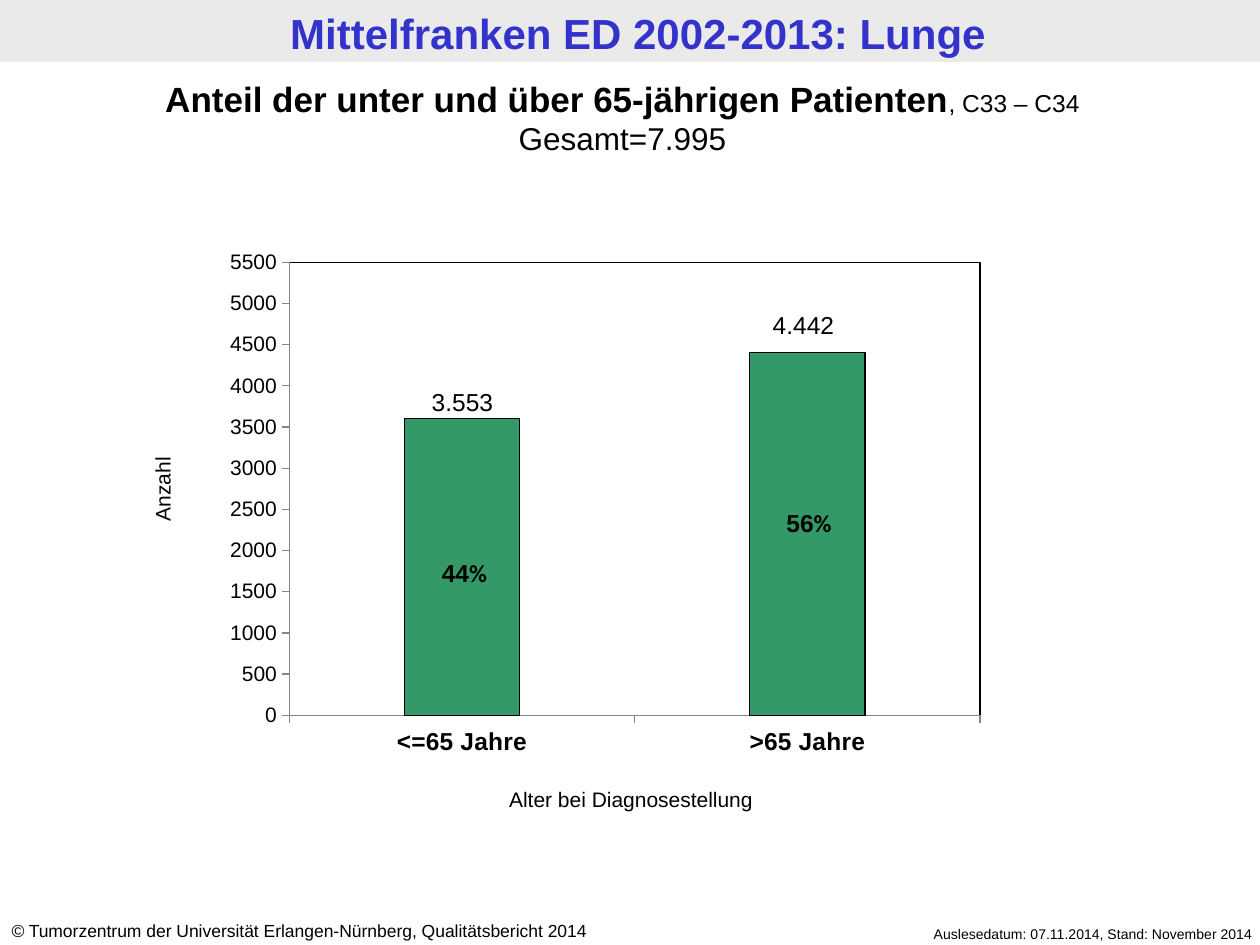
from lxml import etree
from pptx import Presentation
from pptx.chart.data import CategoryChartData
from pptx.dml.color import RGBColor
from pptx.enum.chart import XL_CHART_TYPE, XL_TICK_MARK
from pptx.enum.shapes import MSO_SHAPE
from pptx.enum.text import MSO_AUTO_SIZE, PP_ALIGN
from pptx.oxml import parse_xml
from pptx.oxml.ns import nsdecls, qn
from pptx.util import Emu, Pt

PX = 914400 / 126
BLACK, GREY, BAND, BLUE, GREEN = "000000", "868686", "EAEAEA", "3333CC", "339966"
LEFT, CENTER, RIGHT = PP_ALIGN.LEFT, PP_ALIGN.CENTER, PP_ALIGN.RIGHT

# Content: a span is (text, size, style), style letters: b bold, i italic, c Calibri
TITLE = [[("Mittelfranken ED 2002-2013: Lunge", 24, "b")]]
SUBTITLE = [
    [("Anteil der unter und über 65-jährigen Patienten", 20, "b"), (", C33 – C34", 14, "")],
    [("Gesamt=7.995", 18, "")],
]
SOURCE = [[("©", 10, "i"),
           (" Tumorzentrum der Universität Erlangen-Nürnberg, Qualitätsbericht 2014", 10, "")]]
DATES = [[("Auslesedatum: 07.11.2014, Stand: November 2014", 8, "")]]
AGE_GROUPS = {"<=65 Jahre": 3600, ">65 Jahre": 4400}
CHART_AREA = (190, 179, 879, 587)
PLOT_LAYOUT = {"x": 0.113, "y": 0.142, "w": 0.786, "h": 0.772}

# Labels around the bars: (text, bold with Calibri percent sign, area, rotation)
LABELS = [
    ("44", True, (402, 552, 125, 43), 0),
    ("56", True, (749, 502, 120, 43), 0),
    ("3.553", False, (398, 381, 129, 43), 0),
    ("4.442", False, (739, 304, 129, 43), 0),
]
AXIS_TITLES = [
    ("Alter bei Diagnosestellung", (421, 780, 420, 38), 0),
    ("Anzahl", (-2, 470, 329, 38), 270),
]


def px(*values):
    return [Emu(round(value * PX)) for value in values]


def color(code):
    return RGBColor.from_string(code)


def set_font(font, size, code=BLACK, bold=False, name="Arial"):
    font.name, font.size, font.bold = name, Pt(size), bold
    font.color.rgb = color(code)


def add_text(page, area, paragraphs, align=CENTER, code=BLACK, rotation=0, insets=None):
    box = page.shapes.add_textbox(*px(*area))
    box.rotation = rotation
    frame = box.text_frame
    frame.word_wrap = True
    frame.auto_size = MSO_AUTO_SIZE.SHAPE_TO_FIT_TEXT
    if insets:
        frame.margin_left, frame.margin_top, frame.margin_right, frame.margin_bottom = px(*insets)
    for index, spans in enumerate(paragraphs):
        paragraph = frame.add_paragraph() if index else frame.paragraphs[0]
        paragraph.alignment = align
        for text, size, style in spans:
            span = paragraph.add_run()
            span.text = text
            set_font(span.font, size, code, "b" in style, "Calibri" if "c" in style else "Arial")
            span.font.italic = "i" in style


def add_age_chart(page):
    data = CategoryChartData()
    data.categories = list(AGE_GROUPS)
    data.add_series("Anzahl", list(AGE_GROUPS.values()))
    chart = page.shapes.add_chart(XL_CHART_TYPE.COLUMN_STACKED, *px(*CHART_AREA), data).chart
    chart.has_legend = chart.has_title = False
    set_font(chart.font, 18, name="Calibri")

    # Bars
    plot = chart.plots[0]
    plot.gap_width, plot.overlap, plot.vary_by_categories = 200, 100, False
    bars = plot.series[0].format
    bars.fill.solid()
    bars.fill.fore_color.rgb = color(GREEN)
    bars.line.color.rgb = color(BLACK)
    bars.line.width = Pt(0.75)

    # Axes
    for axis, size, bold in ((chart.category_axis, 14, True), (chart.value_axis, 12, False)):
        axis.has_major_gridlines = False
        axis.major_tick_mark = XL_TICK_MARK.OUTSIDE
        axis.minor_tick_mark = XL_TICK_MARK.NONE
        axis.format.line.color.rgb = color(GREY)
        axis.format.line.width = Pt(0.75)
        set_font(axis.tick_labels.font, size, bold=bold)
    values = chart.value_axis
    values.minimum_scale, values.maximum_scale, values.major_unit = 0, 5500, 500
    values.tick_labels.number_format = "0"
    values.tick_labels.number_format_is_linked = False

    # Plot position and frame
    area = chart.plots[0]._element.getparent()
    for old in area.findall(qn("c:layout")):
        area.remove(old)
    layout = etree.Element(qn("c:layout"))
    manual = etree.SubElement(layout, qn("c:manualLayout"))
    settings = {"layoutTarget": "inner", "xMode": "edge", "yMode": "edge", **PLOT_LAYOUT}
    for key, value in settings.items():
        etree.SubElement(manual, qn(f"c:{key}")).set("val", str(value))
    area.insert(0, layout)
    area.append(parse_xml(
        f'<c:spPr {nsdecls("c", "a")}><a:noFill/><a:ln w="9525"><a:solidFill>'
        f'<a:srgbClr val="{BLACK}"/></a:solidFill></a:ln></c:spPr>'))


def main():
    deck = Presentation()
    deck.slide_width, deck.slide_height = px(1260, 945)
    page = deck.slides.add_slide(deck.slide_layouts[6])

    # Header band and title
    band = page.shapes.add_shape(MSO_SHAPE.RECTANGLE, *px(0, 0, 1260, 62))
    band.shadow.inherit = False
    band.fill.solid()
    band.fill.fore_color.rgb = color(BAND)
    band.line.fill.background()
    add_text(page, (8, 2, 1260, 62), TITLE, code=BLUE, insets=(11, 6, 11, 5))

    # Footer
    add_text(page, (838, 919, 427, 30), DATES, RIGHT)
    add_text(page, (-1, 914, 660, 34), SOURCE, LEFT)

    # Chart with its heading and labels
    add_age_chart(page)
    add_text(page, (0, 71, 1245, 93), SUBTITLE)
    for text, is_share, area, rotation in LABELS:
        spans = [(text, 14, "b"), ("%", 14, "bc")] if is_share else [(text, 14, "")]
        add_text(page, area, [spans], rotation=rotation)
    for text, area, rotation in AXIS_TITLES:
        add_text(page, area, [[(text, 12, "")]], rotation=rotation)

    deck.save("out.pptx")


if __name__ == "__main__":
    main()
